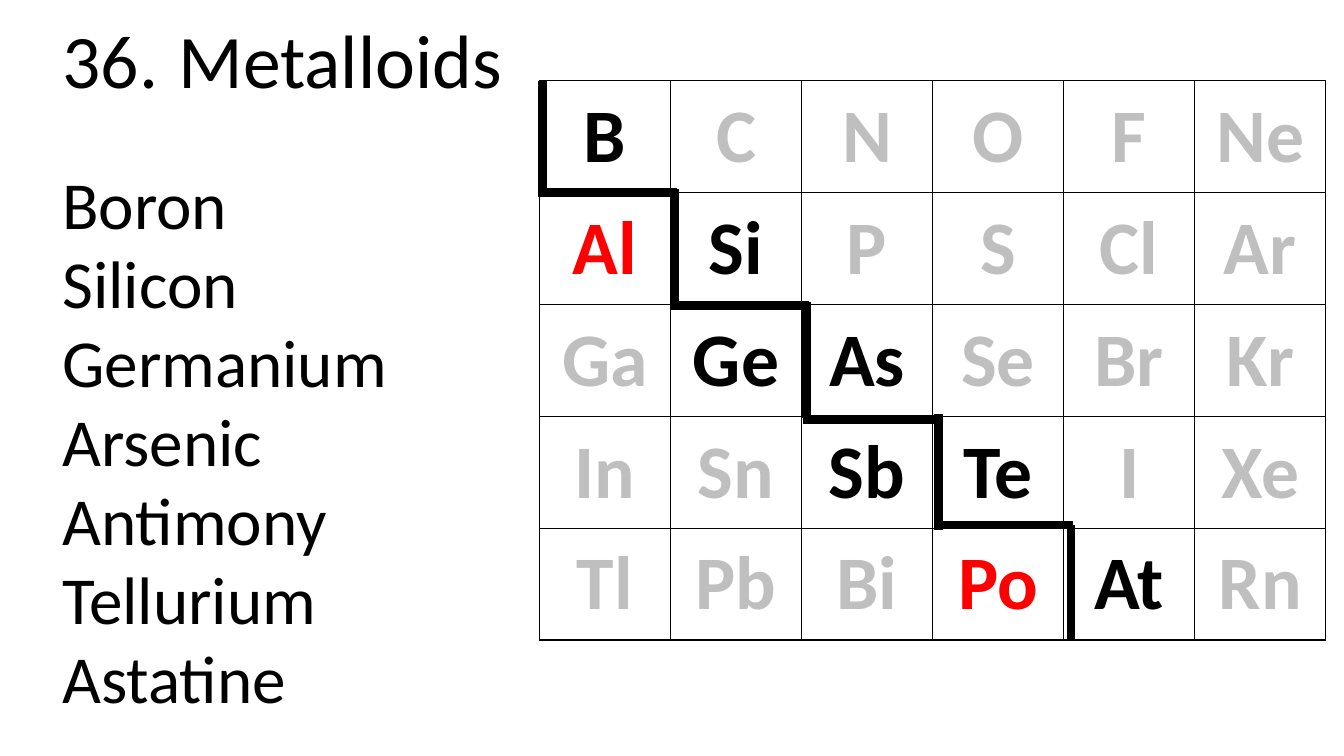
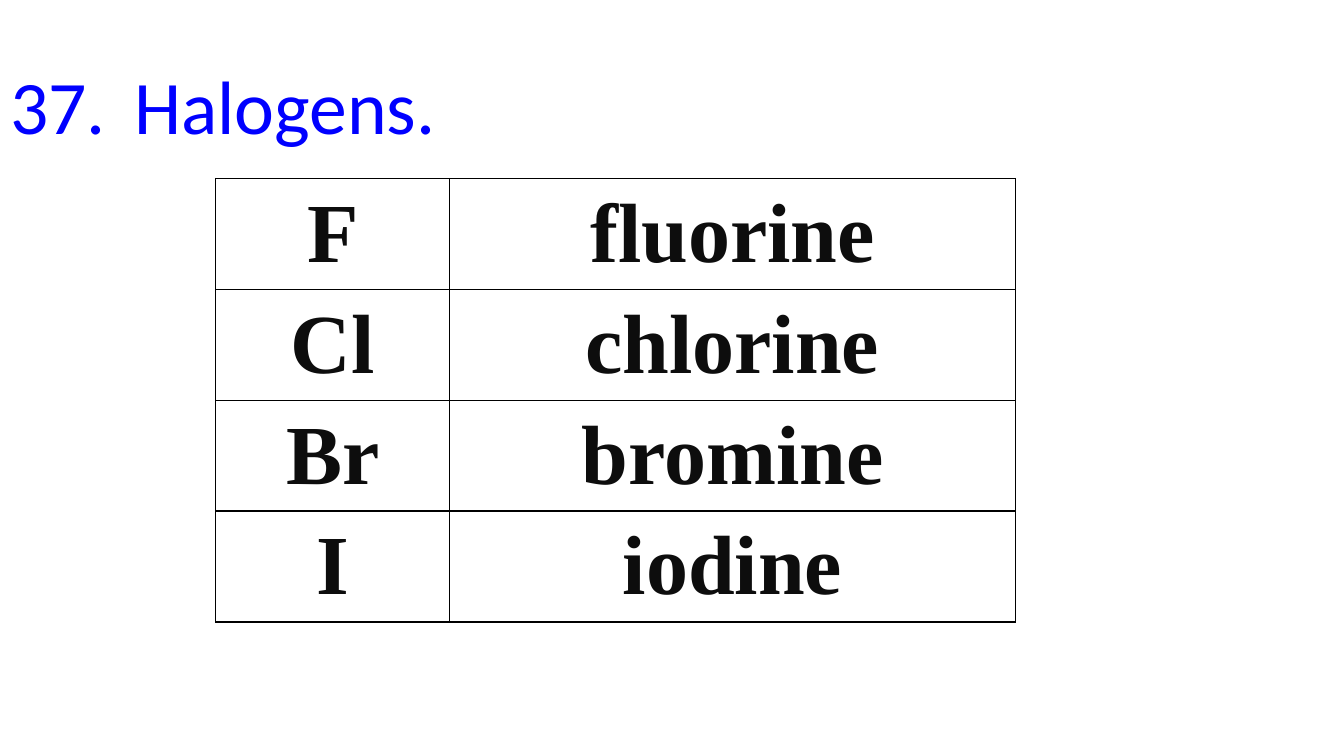
from pptx import Presentation
from pptx.dml.color import RGBColor
from pptx.enum.shapes import MSO_CONNECTOR
from pptx.enum.text import MSO_ANCHOR, MSO_AUTO_SIZE, PP_ALIGN
from pptx.oxml.ns import qn
from pptx.util import Inches, Pt
from lxml.etree import SubElement

BLACK = "000000"
GRAY = "BFBFBF"
RED = "FF0000"
BLUE = "0000FF"
CHARCOAL = "0D0D0D"


def rgb(value):
    return RGBColor.from_string(value)


def write(paragraph, text, size=54, font="Calibri", color=BLACK, bold=False,
          align=PP_ALIGN.LEFT, spacing=None):
    paragraph.alignment = align
    if spacing:
        paragraph.line_spacing = spacing
    run = paragraph.add_run()
    run.text = text
    run.font.size = Pt(size)
    run.font.name = font
    run.font.bold = bold
    run.font.color.rgb = rgb(color)


class Deck:
    title_size = 54
    body_size = 48
    grid_line = Pt(1)

    def __init__(self):
        self.presentation = Presentation()
        self.presentation.slide_width = Inches(13.33)
        self.presentation.slide_height = Inches(7.5)
        self.slide = None

    def add_slide(self):
        layout = self.presentation.slide_layouts[5]
        self.slide = self.presentation.slides.add_slide(layout)

    def frame(self, shape, left, top, width, height):
        shape.left, shape.top = Inches(left), Inches(top)
        shape.width, shape.height = Inches(width), Inches(height)
        text_frame = shape.text_frame
        text_frame.word_wrap = True
        text_frame.auto_size = MSO_AUTO_SIZE.NONE
        text_frame.vertical_anchor = MSO_ANCHOR.TOP
        return text_frame

    def numbered_title(self, number, text, left, top, indent, color=BLACK):
        title = self.frame(self.slide.shapes.title, left, top, 12.36, 1.1)
        paragraph = title.paragraphs[0]
        write(paragraph, text, size=self.title_size, color=color)
        properties = paragraph._p.get_or_add_pPr()
        properties.set("marL", str(Inches(indent)))
        properties.set("indent", str(-Inches(indent)))
        SubElement(properties, qn("a:buFont"), typeface="+mj-lt")
        SubElement(properties, qn("a:buAutoNum"), type="arabicPeriod",
                   startAt=str(number))

    def name_list(self, names, left, top, width, height):
        box = self.slide.shapes.add_textbox(0, 0, 0, 0)
        text_frame = self.frame(box, left, top, width, height)
        for index, name in enumerate(names):
            paragraph = text_frame.add_paragraph() if index else text_frame.paragraphs[0]
            write(paragraph, name, size=self.body_size, spacing=0.98)

    def border(self, cell):
        properties = cell._tc.get_or_add_tcPr()
        for position, side in enumerate(("lnL", "lnR", "lnT", "lnB")):
            edge = SubElement(properties, qn(f"a:{side}"), w=str(self.grid_line))
            fill = SubElement(edge, qn("a:solidFill"))
            SubElement(fill, qn("a:srgbClr"), val=BLACK)
            properties.insert(position, edge)

    def grid(self, rows, left, top, column_widths, row_height, color_of, **style):
        table = self.slide.shapes.add_table(
            len(rows), len(column_widths), Inches(left), Inches(top),
            Inches(sum(column_widths)), Inches(row_height * len(rows))).table
        table.first_row = table.horz_banding = False
        for column, width in zip(table.columns, column_widths):
            column.width = Inches(width)
        for row, texts in zip(table.rows, rows):
            row.height = Inches(row_height)
            for cell, text in zip(row.cells, texts):
                cell.fill.background()
                cell.vertical_anchor = MSO_ANCHOR.MIDDLE
                self.border(cell)
                write(cell.text_frame.paragraphs[0], text, color=color_of(text),
                      bold=True, align=PP_ALIGN.CENTER, **style)

    def line(self, start_x, start_y, end_x, end_y, width=6):
        connector = self.slide.shapes.add_connector(
            MSO_CONNECTOR.STRAIGHT, Inches(start_x), Inches(start_y),
            Inches(end_x), Inches(end_y))
        connector.line.color.rgb = rgb(BLACK)
        connector.line.width = Pt(width)
        SubElement(connector._element.spPr, qn("a:effectLst"))


def metalloids(deck):
    deck.add_slide()
    deck.numbered_title(36, "Metalloids", 0.52, 0.08, 1.15)
    deck.name_list(["Boron", "Silicon", "Germanium", "Arsenic", "Antimony",
                    "Tellurium", "Astatine"], 0.52, 1.6, 4.7, 5.75)
    elements = ["B C N O F Ne", "Al Si P S Cl Ar", "Ga Ge As Se Br Kr",
                "In Sn Sb Te I Xe", "Tl Pb Bi Po At Rn"]
    symbol_colors = dict.fromkeys("B Si Ge As Sb Te At".split(), BLACK)
    symbol_colors.update(Al=RED, Po=RED)
    deck.grid([period.split() for period in elements], 5.35, 0.8, [1.3] * 6, 1.11,
              lambda symbol: symbol_colors.get(symbol, GRAY))

    stair_left, tread = 5.38, 1.31
    for step, riser_top in enumerate((0.8, 1.88, 3, 4.11, 5.21)):
        riser_x = stair_left + step * tread
        deck.line(riser_x, riser_top, riser_x, riser_top + 1.15)
    for step, tread_y in enumerate((1.91, 3.03, 4.16, 5.21)):
        tread_x = stair_left + step * tread
        deck.line(tread_x - 0.04, tread_y, tread_x + tread + 0.02, tread_y)


def halogens(deck):
    deck.add_slide()
    deck.numbered_title(37, "Halogens.", 0, 0.53, 1.23, color=BLUE)
    deck.grid([("F", "fluorine"), ("Cl", "chlorine"), ("Br", "bromine"),
               ("I", "iodine")], 2.14, 1.77, [2.32, 5.61], 1.1,
              lambda text: CHARCOAL, size=60, font="Times New Roman")


def main():
    deck = Deck()
    metalloids(deck)
    halogens(deck)
    deck.presentation.save("out.pptx")


if __name__ == "__main__":
    main()
